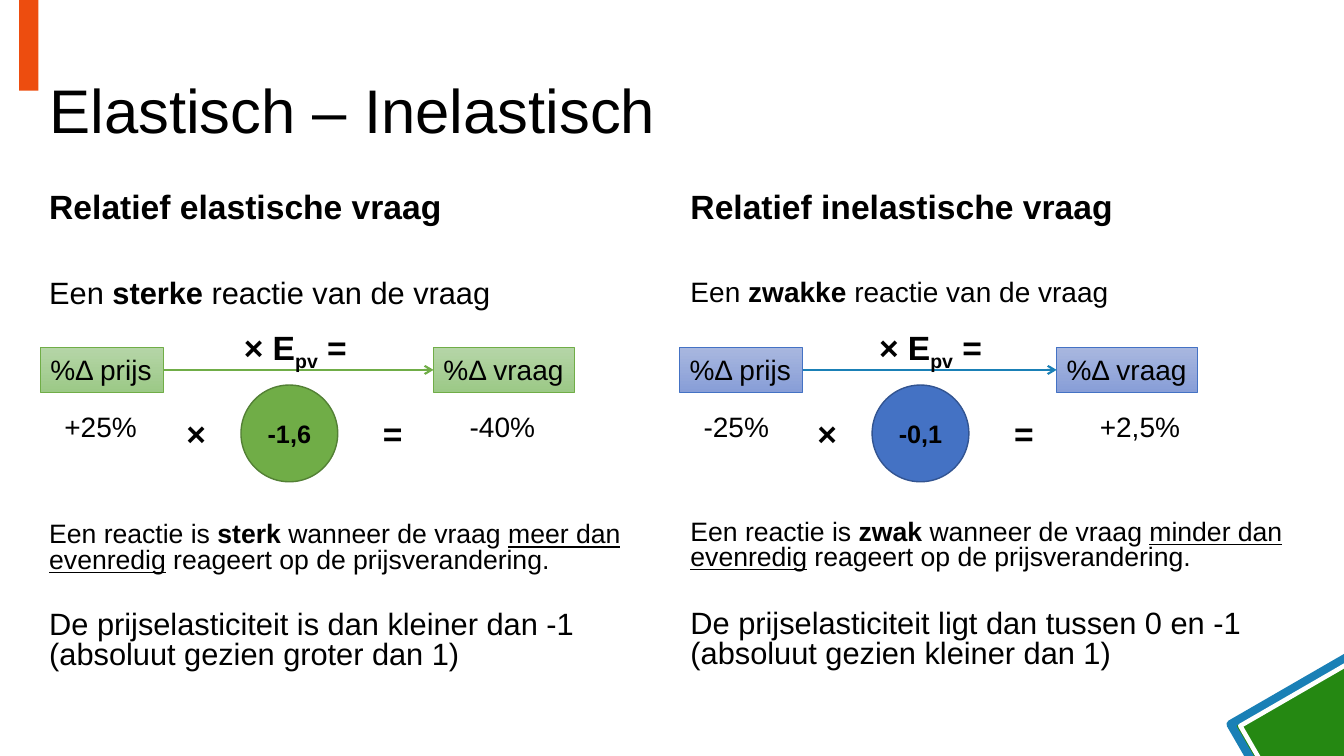
from dataclasses import dataclass

from lxml import etree
from pptx import Presentation, util as u
from pptx.dml.color import RGBColor
from pptx.enum import shapes, text
from pptx.oxml.ns import qn

PX = 9144  # EMU per px, 100 px to the inch
BLACK = RGBColor(0x00, 0x00, 0x00)
WHITE = RGBColor(0xFF, 0xFF, 0xFF)
ORANGE = RGBColor(0xED, 0x4D, 0x0F)
LEAF = RGBColor(0x25, 0x88, 0x12)
TEAL = RGBColor(0x1A, 0x80, 0xB6)
GREEN = RGBColor(0x70, 0xAD, 0x47)
GREEN_DARK = RGBColor(0x53, 0x80, 0x35)
GREEN_TINTS = RGBColor(0xB5, 0xD5, 0xA7), RGBColor(0x9C, 0xC9, 0x87)
BLUE = RGBColor(0x44, 0x72, 0xC4)
BLUE_DARK = RGBColor(0x32, 0x54, 0x91)
BLUE_TINTS = RGBColor(0xA8, 0xB7, 0xDF), RGBColor(0x88, 0x9E, 0xD7)
RECT = shapes.MSO_SHAPE.RECTANGLE
OVAL = shapes.MSO_SHAPE.OVAL


@dataclass
class Side:
    """Wording, colours and offsets (px from the column's left) of one column."""
    heading: str
    intro: list
    intro_size: int
    rule: list
    conclusion: str
    conclusion_gap: int
    price: tuple      # value, offset, width
    demand: tuple     # value, offset, width
    elasticity: str
    price_x: int
    demand_x: int
    formula_x: int
    circle_x: int
    color: RGBColor
    dark: RGBColor
    tints: tuple
    arrow: RGBColor


def px(*lengths):
    return [u.Emu(n * PX) for n in lengths]


def style(p, size, bold=False):
    for r in p.runs:
        r.font.name, r.font.size = "Arial", u.Pt(size)
        r.font.color.rgb, r.font.bold = BLACK, bold


def write(p, parts, size, bold=False):
    """Fill p with plain text or with (text, mark) parts; marks: b, u, sub."""
    if isinstance(parts, str):
        p.text = parts
        style(p, size, bold)
        return
    for words, _ in parts:
        p.add_run().text = words
    style(p, size, bold)
    for r, (_, mark) in zip(p.runs, parts):
        if mark == "b":
            r.font.bold = True
        elif mark == "u":
            r.font.underline = True
        elif mark == "sub":
            r._r.get_or_add_rPr().set("baseline", "-25000")


def textbox(s, box, parts, size, bold=False, wrap=False):
    tf = s.shapes.add_textbox(*px(*box)).text_frame
    tf.word_wrap = wrap
    write(tf.paragraphs[0], parts, size, bold)
    return tf


def shape(s, kind, box, fill=None, line=None, width=1):
    sp = s.shapes.add_shape(kind, *px(*box))
    sp.shadow.inherit = False
    if fill is None:
        sp.fill.background()
    else:
        sp.fill.solid()
        sp.fill.fore_color.rgb = fill
    if line is None:
        sp.line.fill.background()
    else:
        sp.line.color.rgb, sp.line.width = line, u.Pt(width)
    return sp


def decoration(s):
    for box, fill, line, width in (
        ((1248, 671, 150, 150), LEAF, TEAL, 6),
        ((1255, 677, 136, 136), None, WHITE, 3.25),
    ):
        shape(s, RECT, box, fill, line, width).rotation = 60
    shape(s, RECT, (19, 0, 19, 90), ORANGE)


def title(s, box, words):
    sp = s.shapes.title
    sp.left, sp.top, sp.width, sp.height = px(*box)
    tf = sp.text_frame
    tf.auto_size = text.MSO_AUTO_SIZE.NONE
    tf.vertical_anchor = text.MSO_ANCHOR.MIDDLE
    p = tf.paragraphs[0]
    write(p, words, 44)
    p.alignment, p.line_spacing = text.PP_ALIGN.LEFT, 0.9


def quantity(s, box, words, side):
    sp = shape(s, RECT, box, side.color, side.color, 0.5)
    sp.fill.gradient()
    sp.fill.gradient_angle = 270
    for stop, tint in zip(sp.fill.gradient_stops, side.tints):
        stop.color.rgb = tint
    tf = sp.text_frame
    tf.word_wrap, tf.vertical_anchor = False, text.MSO_ANCHOR.TOP
    p = tf.paragraphs[0]
    write(p, words, 20)
    p.alignment = text.PP_ALIGN.LEFT
    return sp


def arrow(s, start, end, color):
    c = s.shapes.add_connector(shapes.MSO_CONNECTOR.STRAIGHT, 0, 0, 0, 0)
    c.begin_connect(start, 3)
    c.end_connect(end, 1)
    c.line.color.rgb, c.line.width = color, u.Pt(1.5)
    etree.SubElement(c.line._get_or_add_ln(), qn("a:tailEnd"), type="arrow")
    etree.SubElement(c._element.spPr, qn("a:effectLst"))


def formula(s, x, y, side):
    """Price change times elasticity gives demand change."""
    price = quantity(s, (x + side.price_x, y + 26, 122, 44), "%Δ prijs", side)
    demand = quantity(s, (x + side.demand_x, y + 26, 140, 44), "%Δ vraag", side)
    arrow(s, price, demand, side.arrow)
    textbox(s, (x + side.formula_x, y, 127, 50),
            [("× E", ""), ("pv", "sub"), (" =", "")], 24, True)
    for value, dx, width in (side.price, side.demand):
        textbox(s, (x + dx, y + 82, width, 44), value, 20)

    circle_x = x + side.circle_x
    sp = shape(s, OVAL, (circle_x, y + 63, 96, 96), side.color, side.dark)
    p = sp.text_frame.paragraphs[0]
    write(p, side.elasticity, 18, True)
    p.alignment = text.PP_ALIGN.CENTER
    for sign, dx in (("×", -64), ("=", 131)):
        textbox(s, (circle_x + dx, y + 86, 40, 50), sign, 24, True)


def column(s, box, side):
    x, y, w, h = box
    p = textbox(s, (x, y, w, 90), side.heading, 24, True, True).paragraphs[0]
    p.line_spacing, p.space_before = 0.9, u.Pt(10)

    # Body text, with room for the formula after the first line
    tf = textbox(s, (x, y + 90, w, h - 90), side.intro, side.intro_size, wrap=True)
    write(tf.add_paragraph(), side.rule, 19)
    write(tf.add_paragraph(), side.conclusion, 22)
    for p, gap in zip(tf.paragraphs, (10, 152, side.conclusion_gap)):
        p.line_spacing, p.space_before = 0.8, u.Pt(gap)
    formula(s, x, y + 135, side)


ELASTIC = Side(
    "Relatief elastische vraag",
    [("Een ", ""), ("sterke ", "b"), ("reactie van de vraag", "")], 22,
    [("Een reactie is ", ""), ("sterk", "b"), (" wanneer de vraag ", ""),
     ("meer dan evenredig", "u"), (" reageert op de prijsverandering.", "")],
    "De prijselasticiteit is dan kleiner dan -1\v(absoluut gezien groter dan 1)", 27,
    ("+25%", 15, 93), ("-40%", 417, 86), "-1,6",
    price_x=1, demand_x=391, formula_x=193, circle_x=200,
    color=GREEN, dark=GREEN_DARK, tints=GREEN_TINTS, arrow=GREEN)
INELASTIC = Side(
    "Relatief inelastische vraag",
    [("Een ", ""), ("zwakke ", "b"), ("reactie van de vraag", "")], 20,
    [("Een reactie is ", ""), ("zwak", "b"), (" wanneer de vraag ", ""),
     ("minder dan evenredig", "u"), (" reageert op de prijsverandering.", "")],
    "De prijselasticiteit ligt dan tussen 0 en -1\v(absoluut gezien kleiner dan 1)", 28,
    ("-25%", 13, 86), ("+2,5%", 406, 100), "-0,1",
    price_x=-1, demand_x=373, formula_x=187, circle_x=190,
    color=BLUE, dark=BLUE_DARK, tints=BLUE_TINTS, arrow=TEAL)


def main():
    prs = Presentation()
    prs.slide_width, prs.slide_height = px(1333, 750)
    s = prs.slides.add_slide(prs.slide_layouts[5])
    decoration(s)
    title(s, (39, 40, 1256, 145), "Elastisch – Inelastisch")
    column(s, (39, 184, 617, 526), ELASTIC)
    column(s, (675, 184, 619, 526), INELASTIC)
    prs.save("out.pptx")


if __name__ == "__main__":
    main()
